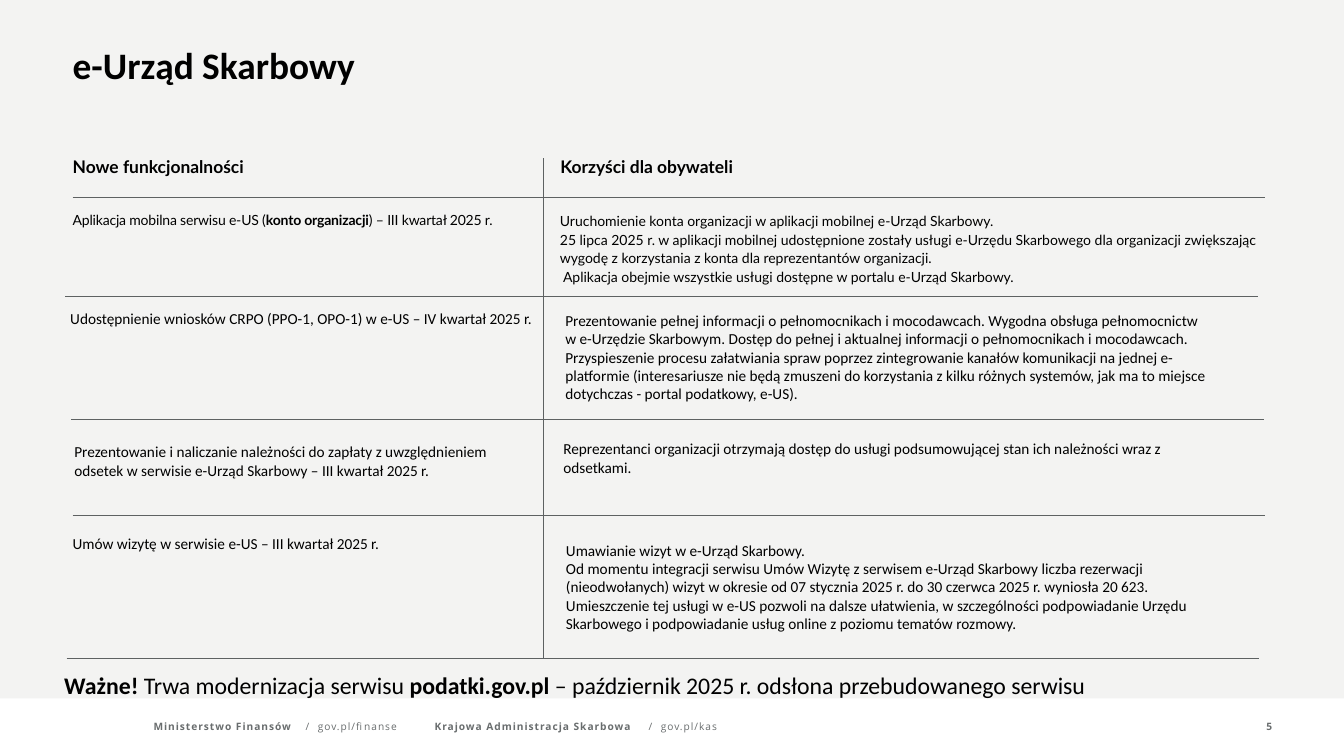
from lxml.etree import SubElement
from pptx import Presentation
from pptx.dml.color import RGBColor
from pptx.enum.shapes import MSO_CONNECTOR, MSO_SHAPE
from pptx.enum.text import MSO_ANCHOR, MSO_AUTO_SIZE, PP_ALIGN
from pptx.oxml.ns import qn
from pptx.util import Cm, Pt

BLACK = RGBColor(0x00, 0x00, 0x00)
PANEL_GREY = RGBColor(0xF3, 0xF3, 0xF2)
LINE_GREY = RGBColor(0x5D, 0x61, 0x62)
FOOTER_GREY = RGBColor(0x69, 0x6D, 0x6E)

TABLE_WIDTH = 49.56
DIVIDER_X, DIVIDER_TOP = 22.58, 6.58
ROW_LINES = [(3.02, 8.18), (2.72, 12.32), (2.97, 17.4), (3.02, 21.41), (2.77, 27.36)]

# Box formats: tight boxes have almost no inner margin
TIGHT = {"margins": (0, 0.03)}
HEADING = {"size": 20.5, "font": "Lato", "bold": True, "before": 1.1, "margins": (0, 0.05)}
LATO_CELL = {"size": 16.5, "font": "Lato", "line_spacing": 21.8, **TIGHT}
FOOTER = {"size": 12, "font": "Open Sans", "color": FOOTER_GREY, "before": 2.2,
          "margins": (0, 0.08)}

# Cells: left, top, width, height, paragraphs, format
CELLS = [
    (3.02, 6.45, 7.34, 0.94, ["Nowe funkcjonalności"], HEADING),
    (23.29, 6.45, 10.52, 0.94, ["Korzyści dla obywateli"], HEADING),
    (3.02, 8.71, 18.8, 0.74,
     [[("Aplikacja mobilna serwisu e-US (", False), ("konto organizacji", True),
       (") – III kwartał 2025 r.", False)]],
     {**LATO_CELL, "before": 1, "spacing": -0.2}),
    (23.27, 8.74, 29.31, 3.1,
     ["Uruchomienie konta organizacji w aplikacji mobilnej e-Urząd Skarbowy.",
      "25 lipca 2025 r. w aplikacji mobilnej udostępnione zostały usługi e-Urzędu Skarbowego "
      "dla organizacji zwiększając wygodę z korzystania z konta dla reprezentantów organizacji.",
      " Aplikacja obejmie wszystkie usługi dostępne w portalu e-Urząd Skarbowy."], LATO_CELL),
    (2.67, 12.73, 20.27, 1.02,
     ["Udostępnienie wniosków CRPO (PPO-1, OPO-1) w e-US – IV kwartał 2025 r."], {}),
    (23.24, 12.8, 27.33, 4.11,
     ["Prezentowanie pełnej informacji o pełnomocnikach i mocodawcach. Wygodna obsługa "
      "pełnomocnictw w e-Urzędzie Skarbowym. Dostęp do pełnej i aktualnej informacji o "
      "pełnomocnikach i mocodawcach. Przyspieszenie procesu załatwiania spraw poprzez "
      "zintegrowanie kanałów komunikacji na jednej e-platformie (interesariusze nie będą "
      "zmuszeni do korzystania z kilku różnych systemów, jak ma to miejsce dotychczas - "
      "portal podatkowy, e-US)."], {}),
    (2.84, 18.26, 20.27, 1.8,
     ["Prezentowanie i naliczanie należności do zapłaty z uwzględnieniem",
      "odsetek w serwisie e-Urząd Skarbowy – III kwartał 2025 r."], {}),
    (23.16, 18.14, 27.91, 1.8,
     ["Reprezentanci organizacji otrzymają dostęp do usługi podsumowującej stan ich "
      "należności wraz z odsetkami."], {}),
    (3.02, 22.17, 16.05, 0.79, ["Umów wizytę w serwisie e-US – III kwartał 2025 r."],
     {**TIGHT, "before": 0.9, "line_spacing": 21.8}),
    (23.27, 22.35, 27.91, 4.11,
     ["Umawianie wizyt w e-Urząd Skarbowy.",
      "Od momentu integracji serwisu Umów Wizytę z serwisem e-Urząd Skarbowy liczba "
      "rezerwacji (nieodwołanych) wizyt w okresie od 07 stycznia 2025 r. do 30 czerwca "
      "2025 r. wyniosła 20 623. Umieszczenie tej usługi w e-US pozwoli na dalsze ułatwienia, "
      "w szczególności podpowiadanie Urzędu Skarbowego i podpowiadanie usług online z poziomu "
      "tematów rozmowy."], {}),
]

# Footer entries: left, width, tab stops, name, address
FOOTER_ENTRIES = [
    (6.38, 10.36, (6.32, 6.83), "Ministerstwo Finansów", "gov.pl/finanse"),
    (18.06, 11.91, (8.89, 9.4), "Krajowa Administracja Skarbowa", "gov.pl/kas"),
]


def place(shape, left, top, width, height):
    shape.left, shape.top, shape.width, shape.height = map(Cm, (left, top, width, height))


def write_text(shape, paragraphs, size=18, font="Calibri", color=BLACK, bold=False, spacing=0,
               before=0, line_spacing=None, margins=(0.25, 0.13), tabs=()):
    """Each paragraph is a string or a list of (text, bold) runs."""
    frame = shape.text_frame
    frame.word_wrap = True
    frame.auto_size = MSO_AUTO_SIZE.SHAPE_TO_FIT_TEXT
    frame.vertical_anchor = MSO_ANCHOR.TOP
    frame.margin_left = frame.margin_right = Cm(margins[0])
    frame.margin_top, frame.margin_bottom = Cm(margins[1]), 0
    for index, content in enumerate(paragraphs):
        paragraph = frame.add_paragraph() if index else frame.paragraphs[0]
        paragraph.alignment = PP_ALIGN.LEFT
        paragraph.space_before = Pt(before)
        if line_spacing:
            paragraph.line_spacing = Pt(line_spacing)
        if tabs:
            tab_list = SubElement(paragraph._p.get_or_add_pPr(), qn("a:tabLst"))
            for position in tabs:
                SubElement(tab_list, qn("a:tab"), pos=str(Cm(position)), algn="l")
        for text, run_bold in [(content, bold)] if isinstance(content, str) else content:
            run = paragraph.add_run()
            run.text = text
            run.font.name, run.font.size, run.font.bold = font, Pt(size), run_bold
            run.font.color.rgb = color
            if spacing:
                run._r.get_or_add_rPr().set("spc", str(round(spacing * 100)))


def add_text(slide, left, top, width, height, paragraphs, **text_format):
    shape = slide.shapes.add_textbox(Cm(left), Cm(top), Cm(width), Cm(height))
    write_text(shape, paragraphs, **text_format)


def add_rule(slide, left, top, right, bottom):
    rule = slide.shapes.add_connector(MSO_CONNECTOR.STRAIGHT, *map(Cm, (left, top, right, bottom)))
    rule.line.color.rgb = LINE_GREY
    rule.line.width = Pt(0.25)
    SubElement(rule._element.spPr, qn("a:effectLst"))


def add_panel(slide, width, height):
    panel = slide.shapes.add_shape(MSO_SHAPE.RECTANGLE, 0, 0, width, height)
    panel.shadow.inherit = False
    panel.fill.solid()
    panel.fill.fore_color.rgb = PANEL_GREY
    panel.line.fill.background()
    # Send the panel behind the title
    slide.shapes._spTree.insert(2, panel._element)


def main():
    presentation = Presentation()
    presentation.slide_width, presentation.slide_height = Cm(55.85), Cm(31.42)
    slide = presentation.slides.add_slide(presentation.slide_layouts[5])

    # Background and title
    add_panel(slide, presentation.slide_width, Cm(29.03))
    title = slide.shapes.title
    place(title, 3.02, 1.73, 17.32, 1.9)
    write_text(title, ["e-Urząd Skarbowy"], size=44, bold=True, before=0.9, **TIGHT)

    # Functions and benefits
    for left, top, width, height, paragraphs, text_format in CELLS:
        add_text(slide, left, top, width, height, paragraphs, **text_format)
    for left, top in ROW_LINES:
        add_rule(slide, left, top, left + TABLE_WIDTH, top)
    add_rule(slide, DIVIDER_X, DIVIDER_TOP, DIVIDER_X, ROW_LINES[-1][1])

    # Closing notice
    notice = [("Ważne! ", True), ("Trwa modernizacja serwisu ", False), ("podatki.gov.pl ", True),
              ("– październik 2025 r. odsłona przebudowanego serwisu", False)]
    add_text(slide, 2.67, 27.84, 46.71, 1.22, [notice], size=28, before=0.9, **TIGHT)

    # Footer
    for left, width, tabs, name, address in FOOTER_ENTRIES:
        add_text(slide, left, 29.87, width, 0.66, [[(name, True), (f"\t/\t{address}", False)]],
                 tabs=tabs, spacing=1.15, **FOOTER)
    add_text(slide, 52.63, 29.87, 0.51, 0.66, ["5"], bold=True, **FOOTER)

    presentation.save("out.pptx")


if __name__ == "__main__":
    main()
